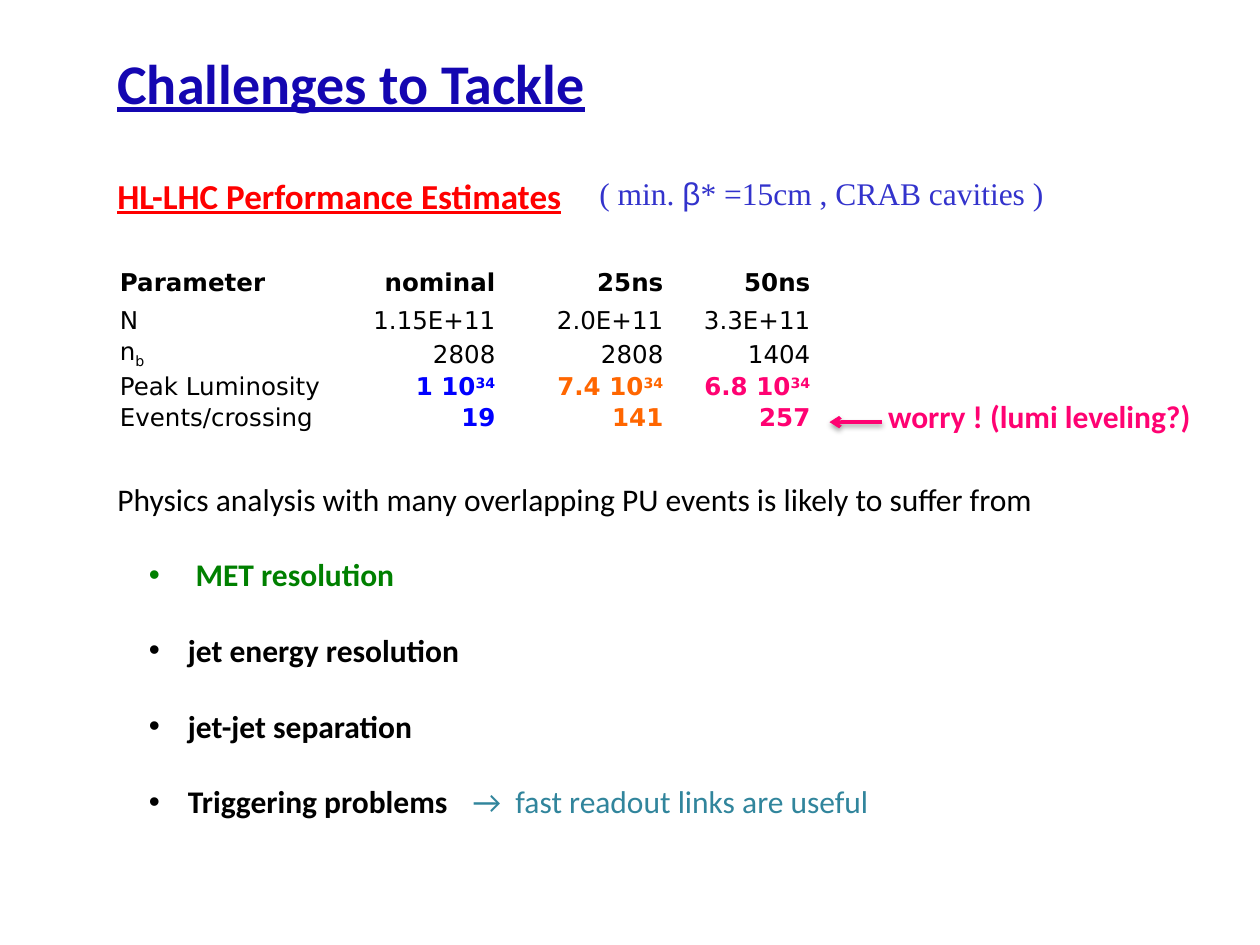
from dataclasses import dataclass

from lxml import etree
from pptx import Presentation
from pptx.dml.color import RGBColor
from pptx.enum.shapes import MSO_CONNECTOR
from pptx.enum.text import MSO_ANCHOR, PP_ALIGN
from pptx.oxml.ns import qn
from pptx.util import Inches, Pt

STRAIGHT = MSO_CONNECTOR.STRAIGHT
BOTTOM = MSO_ANCHOR.BOTTOM
LEFT, RIGHT = PP_ALIGN.LEFT, PP_ALIGN.RIGHT

COLORS = {
    "title": "1406B1", "red": "FF0000", "violet": "3333CC", "black": "000000",
    "blue": "0000FF", "orange": "FF6600", "pink": "FF0272",
    "green": "008000", "teal": "31859C",
}

SLIDE_WIDTH, SLIDE_HEIGHT = Inches(10), Inches(7.5)
COLUMN = SLIDE_WIDTH / 12
ROW = SLIDE_HEIGHT / 22.5

BULLET_MARGIN = 0.56
BULLET_HANG = 0.31
SPACE_WIDTH = 0.06
REMARK_STOP = 2.82
BULLET_GAP = Pt(21.6)


@dataclass(frozen=True)
class Span:
    text: str
    color: str = "black"
    size: float = 18
    name: str = "Calibri"
    bold: bool = False
    underline: bool = False
    baseline: int = 0


@dataclass(frozen=True)
class Box:
    """A text box placed in grid columns and rows."""
    left: float
    top: float
    width: float
    height: float
    spans: tuple[Span, ...]
    wrap: bool = False


@dataclass(frozen=True)
class Bullet:
    spans: tuple[Span, ...]
    shift: float = 0


def table_span(text: str, color: str = "black", bold: bool = False, baseline: int = 0) -> Span:
    return Span(text, color, 14, "DejaVu Sans", bold, baseline=baseline)


def luminosity(value: str, color: str) -> tuple[Span, ...]:
    return table_span(f"{value} 10", color, True), table_span("34", color, True, 30)


def plain_row(*texts: str, bold: bool = False) -> list[tuple[Span, ...]]:
    return [(table_span(text, bold=bold),) for text in texts]


SERIES_COLORS = ("blue", "orange", "pink")
TABLE_ROWS = [
    plain_row("Parameter", "nominal", "25ns", "50ns", bold=True),
    plain_row("N", "1.15E+11", "2.0E+11", "3.3E+11"),
    [(table_span("n"), table_span("b", baseline=-25)), *plain_row("2808", "2808", "1404")],
    plain_row("Peak Luminosity")
    + [luminosity(value, color) for value, color in zip(("1", "7.4", "6.8"), SERIES_COLORS)],
    plain_row("Events/crossing")
    + [(table_span(value, color, True),) for value, color in zip(("19", "141", "257"), SERIES_COLORS)],
]
TABLE_COLUMN_WIDTHS = (2.1, 1.5, 1.6, 1.4)
TABLE_ROW_HEIGHTS = (1.32, 0.9, 0.78, 0.75, 0.75)

HEADINGS = [
    Box(1, 1, 7.3, 1.92, (Span("Challenges to Tackle", "title", 32, bold=True, underline=True),), True),
    Box(1, 4, 4.54, 1.32,
        (Span("HL-LHC Performance Estimates", "red", 20, bold=True, underline=True),)),
    Box(5.59, 4, 4.51, 1.2, (
        Span("( min. ", "violet", name="Times New Roman"),
        Span("β", "violet", name="Arial"),
        Span("* =15cm , CRAB cavities )", "violet", name="Times New Roman"))),
]
WORRY = Box(8.34, 9.3, 3.16, 1.2, (Span("worry ! (lumi leveling?)", "pink", bold=True),))
BODY = Box(1, 11.28, 9.04, 8.49, (
    Span("Physics analysis with many overlapping PU events is likely to suffer from"),))
BULLETS = [
    Bullet((Span("MET resolution", "green", bold=True),), SPACE_WIDTH),
    Bullet((Span("jet energy resolution", bold=True),)),
    Bullet((Span("jet-jet separation", bold=True),)),
    Bullet((Span("Triggering problems\t", bold=True),
            Span("→  fast readout links are useful", "teal"))),
]


def add_spans(paragraph, spans: tuple[Span, ...]) -> None:
    for span in spans:
        run = paragraph.add_run()
        run.text = span.text
        formats = {"name": span.name, "size": Pt(span.size),
                   "bold": span.bold, "underline": span.underline}
        for attribute, value in formats.items():
            setattr(run.font, attribute, value)
        run.font.color.rgb = RGBColor.from_string(COLORS[span.color])
        if span.baseline:
            run.font._element.set("baseline", str(span.baseline * 1000))


def add_box(slide, box: Box):
    shape = slide.shapes.add_textbox(
        int(box.left * COLUMN), int(box.top * ROW),
        int(box.width * COLUMN), int(box.height * ROW))
    shape.text_frame.word_wrap = box.wrap
    add_spans(shape.text_frame.paragraphs[0], box.spans)
    return shape.text_frame


def add_bullet(text_frame, bullet: Bullet) -> None:
    paragraph = text_frame.add_paragraph()
    paragraph.level = 1
    paragraph.space_before = BULLET_GAP
    properties = paragraph._p.get_or_add_pPr()
    properties.set("marL", str(Inches(BULLET_MARGIN + bullet.shift)))
    properties.set("indent", str(-Inches(BULLET_HANG + bullet.shift)))
    etree.SubElement(properties, qn("a:buFont"), typeface="Arial")
    etree.SubElement(properties, qn("a:buChar"), char="•")
    if len(bullet.spans) > 1:
        # Viewers measure stops either from the indent or from the box edge.
        stops = etree.SubElement(properties, qn("a:tabLst"))
        for stop in (REMARK_STOP - BULLET_MARGIN, REMARK_STOP):
            etree.SubElement(stops, qn("a:tab"), pos=str(Inches(stop)), algn="l")
    add_spans(paragraph, bullet.spans)


def add_performance_table(slide, left: float, top: float) -> None:
    table = slide.shapes.add_table(
        len(TABLE_ROWS), len(TABLE_COLUMN_WIDTHS), int(left * COLUMN), int(top * ROW),
        int(sum(TABLE_COLUMN_WIDTHS) * COLUMN), int(sum(TABLE_ROW_HEIGHTS) * ROW)).table
    table.first_row = table.horz_banding = False
    for column, width in zip(table.columns, TABLE_COLUMN_WIDTHS):
        column.width = int(width * COLUMN)
    for row, height, contents in zip(table.rows, TABLE_ROW_HEIGHTS, TABLE_ROWS):
        row.height = int(height * ROW)
        for index, (cell, spans) in enumerate(zip(row.cells, contents)):
            formats = {"margin_left": Inches(0.01), "margin_right": Inches(0.01),
                       "margin_top": Inches(0.01), "margin_bottom": 0,
                       "vertical_anchor": BOTTOM}
            for attribute, value in formats.items():
                setattr(cell, attribute, value)
            cell.fill.background()
            paragraph = cell.text_frame.paragraphs[0]
            paragraph.alignment = RIGHT if index else LEFT
            add_spans(paragraph, spans)


def add_shadowed_arrow(slide, start: float, end: float, row: float, color: str) -> None:
    height = int(row * ROW)
    arrow = slide.shapes.add_connector(
        STRAIGHT, int(start * COLUMN), height, int(end * COLUMN), height)
    arrow.line.width = Pt(2)
    arrow.line.color.rgb = RGBColor.from_string(COLORS[color])
    etree.SubElement(arrow.line._get_or_add_ln(), qn("a:tailEnd"), type="arrow")
    effects = etree.SubElement(arrow._element.spPr, qn("a:effectLst"))
    shadow = etree.SubElement(
        effects, qn("a:outerShdw"), blurRad=str(Pt(3.1)), dist=str(Pt(1.6)),
        dir="5400000", rotWithShape="0")
    shade = etree.SubElement(shadow, qn("a:srgbClr"), val=COLORS["black"])
    etree.SubElement(shade, qn("a:alpha"), val="38000")


def main() -> None:
    presentation = Presentation()
    presentation.slide_width, presentation.slide_height = SLIDE_WIDTH, SLIDE_HEIGHT
    slide = presentation.slides.add_slide(presentation.slide_layouts[6])
    for heading in HEADINGS:
        add_box(slide, heading)
    add_performance_table(slide, 1.13, 5.76)
    add_shadowed_arrow(slide, 8.4, 7.9, 10.05, "pink")
    add_box(slide, WORRY)
    body = add_box(slide, BODY)
    for bullet in BULLETS:
        add_bullet(body, bullet)
    presentation.save("out.pptx")


if __name__ == "__main__":
    main()
